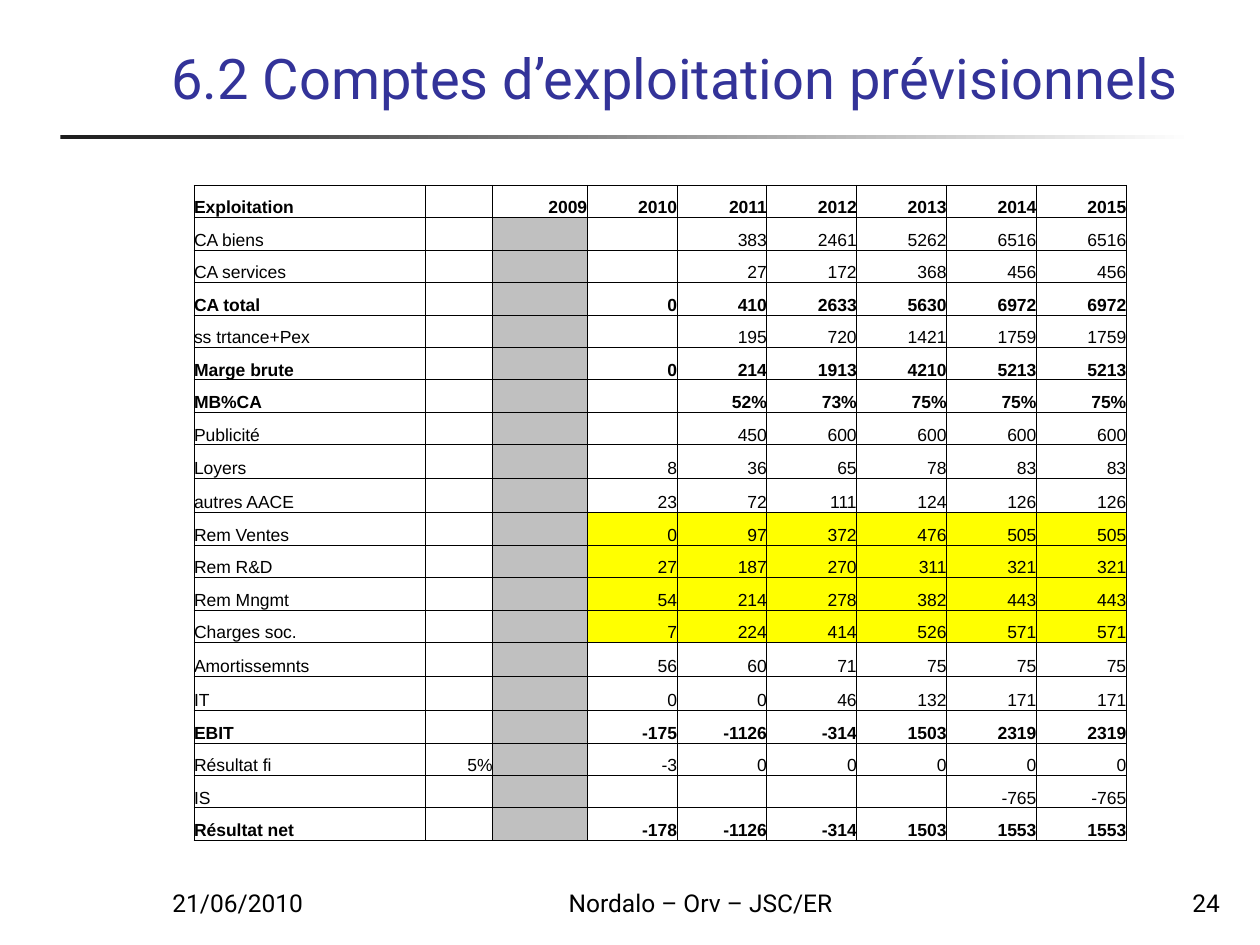
from dataclasses import dataclass

from lxml import etree
from pptx import Presentation
from pptx.dml.color import RGBColor
from pptx.enum import shapes, text
from pptx.oxml.ns import qn
from pptx.util import Inches, Pt


@dataclass(frozen=True)
class Theme:
    """Colours, fonts and type sizes of the slide."""
    title: str = "333399"
    ink: str = "000000"
    rule_start: str = "1C1C1C"
    paper: str = "FFFFFF"
    closed_year: str = "C0C0C0"
    payroll: str = "FFFF00"
    font: str = "Roboto"
    table_font: str = "Arial"
    title_size: int = 32
    footer_size: int = 14
    table_size: int = 10
    border: float = 0.5


THEME = Theme()
ALIGN = text.PP_ALIGN
BOTTOM = text.MSO_ANCHOR.BOTTOM
ROWS = [
    ("Exploitation", "", "2009", "2010", "2011", "2012", "2013", "2014", "2015"),
    ("CA biens", "", "", "", "383", "2461", "5262", "6516", "6516"),
    ("CA services", "", "", "", "27", "172", "368", "456", "456"),
    ("CA total", "", "", "0", "410", "2633", "5630", "6972", "6972"),
    ("ss trtance+Pex", "", "", "", "195", "720", "1421", "1759", "1759"),
    ("Marge brute", "", "", "0", "214", "1913", "4210", "5213", "5213"),
    ("MB%CA", "", "", "", "52%", "73%", "75%", "75%", "75%"),
    ("Publicité", "", "", "", "450", "600", "600", "600", "600"),
    ("Loyers", "", "", "8", "36", "65", "78", "83", "83"),
    ("autres AACE", "", "", "23", "72", "111", "124", "126", "126"),
    ("Rem Ventes", "", "", "0", "97", "372", "476", "505", "505"),
    ("Rem R&D", "", "", "27", "187", "270", "311", "321", "321"),
    ("Rem Mngmt", "", "", "54", "214", "278", "382", "443", "443"),
    ("Charges soc.", "", "", "7", "224", "414", "526", "571", "571"),
    ("Amortissemnts", "", "", "56", "60", "71", "75", "75", "75"),
    ("IT", "", "", "0", "0", "46", "132", "171", "171"),
    ("EBIT", "", "", "-175", "-1126", "-314", "1503", "2319", "2319"),
    ("Résultat fi", "5%", "", "-3", "0", "0", "0", "0", "0"),
    ("IS", "", "", "", "", "", "", "-765", "-765"),
    ("Résultat net", "", "", "-178", "-1126", "-314", "1503", "1553", "1553"),
]
BOLD = {"Exploitation", "CA total", "Marge brute", "MB%CA", "EBIT", "Résultat net"}
PAYROLL = {"Rem Ventes", "Rem R&D", "Rem Mngmt", "Charges soc."}
TALL = {"Loyers", "autres AACE", "Amortissemnts", "IT"}
TALL_HEIGHT = 0.27
LEAD_WIDTHS = [1.84, 0.53, 0.75]


def rgb(value):
    """Turn a hex string into a colour."""
    return RGBColor.from_string(value)


def style(p, font, size, color, bold=False):
    """Format every run of a paragraph."""
    for r in p.runs:
        r.font.name, r.font.size, r.font.bold = font, Pt(size), bold
        r.font.color.rgb = rgb(color)


def add_title(s, box, words):
    """Place the title placeholder in its box."""
    sp = s.shapes.title
    sp.left, sp.top, sp.width, sp.height = map(Inches, box)
    tf = sp.text_frame
    tf.text = words
    tf.auto_size = text.MSO_AUTO_SIZE.NONE
    tf.vertical_anchor = BOTTOM
    tf.paragraphs[0].alignment = ALIGN.LEFT
    style(tf.paragraphs[0], THEME.font, THEME.title_size, THEME.title)


def add_rule(s, box):
    """Draw the fading rule under the title."""
    sp = s.shapes.add_shape(shapes.MSO_SHAPE.RECTANGLE, *map(Inches, box))
    sp.shadow.inherit = False
    sp.line.fill.background()
    sp.fill.gradient()
    sp.fill.gradient_angle = 0
    for stop, color in zip(sp.fill.gradient_stops, (THEME.rule_start, THEME.paper)):
        stop.color.rgb = rgb(color)


def add_footer(s, box, words, align):
    """Place one footer text in its box."""
    tf = s.shapes.add_textbox(*map(Inches, box)).text_frame
    tf.word_wrap = True
    tf.vertical_anchor = BOTTOM
    tf.text = words
    tf.paragraphs[0].alignment = align
    style(tf.paragraphs[0], THEME.font, THEME.footer_size, THEME.ink)


def add_borders(cell):
    """Give a cell a thin line on all four sides."""
    tcPr = cell._tc.get_or_add_tcPr()
    for side in ("a:lnL", "a:lnR", "a:lnT", "a:lnB"):
        ln = etree.SubElement(tcPr, qn(side), w=str(Pt(THEME.border)))
        fill = etree.SubElement(ln, qn("a:solidFill"))
        etree.SubElement(fill, qn("a:srgbClr"), val=THEME.ink)


def fill_cell(cell, words, align, bold, color):
    """Write and format one table cell."""
    cell.margin_left = cell.margin_right = cell.margin_top = cell.margin_bottom = 0
    cell.vertical_anchor = BOTTOM
    add_borders(cell)
    if color:
        cell.fill.solid()
        cell.fill.fore_color.rgb = rgb(color)
    else:
        cell.fill.background()
    cell.text_frame.text = words
    p = cell.text_frame.paragraphs[0]
    p.alignment = align
    style(p, THEME.table_font, THEME.table_size, THEME.ink, bold)
    if not words:
        etree.SubElement(p._p, qn("a:endParaRPr"), sz=str(THEME.table_size * 100))


def cell_color(i, j, label):
    """Choose the fill of a cell from its row and column."""
    if i > 0 and j == 2:
        return THEME.closed_year
    return THEME.payroll if label in PAYROLL and j > 2 else None


def add_accounts(s, box):
    """Place the forecast accounts table in its box."""
    count = len(ROWS[0])
    table = s.shapes.add_table(len(ROWS), count, *map(Inches, box)).table
    table.first_row = table.horz_banding = False
    years = count - len(LEAD_WIDTHS)
    year_width = (box[2] - sum(LEAD_WIDTHS)) / years
    for column, width in zip(table.columns, LEAD_WIDTHS + [year_width] * years):
        column.width = Inches(width)
    row_height = (box[3] - len(TALL) * TALL_HEIGHT) / (len(ROWS) - len(TALL))
    for i, row in enumerate(ROWS):
        label = row[0]
        table.rows[i].height = Inches(TALL_HEIGHT if label in TALL else row_height)
        for j, words in enumerate(row):
            align = ALIGN.RIGHT if j else ALIGN.LEFT
            fill_cell(table.cell(i, j), words, align, label in BOLD,
                      cell_color(i, j, label))


def main():
    """Build the slide and save it."""
    prs = Presentation()
    prs.slide_width, prs.slide_height = Inches(10), Inches(7.5)
    s = prs.slides.add_slide(prs.slide_layouts[5])
    add_rule(s, (0.48, 1.07, 9, 0.03))
    add_footer(s, (1.27, 6.83, 2.08, 0.5), "21/06/2010", ALIGN.LEFT)
    add_footer(s, (4, 6.83, 3.17, 0.5), "Nordalo – Orv – JSC/ER ", ALIGN.CENTER)
    add_footer(s, (7.7, 6.83, 2.08, 0.5), "24", ALIGN.RIGHT)
    add_title(s, (1.26, 0.23, 8.52, 0.7), "6.2 Comptes d’exploitation prévisionnels")
    add_accounts(s, (1.54, 1.47, 7.4, 5.2))
    prs.save("out.pptx")


if __name__ == "__main__":
    main()
